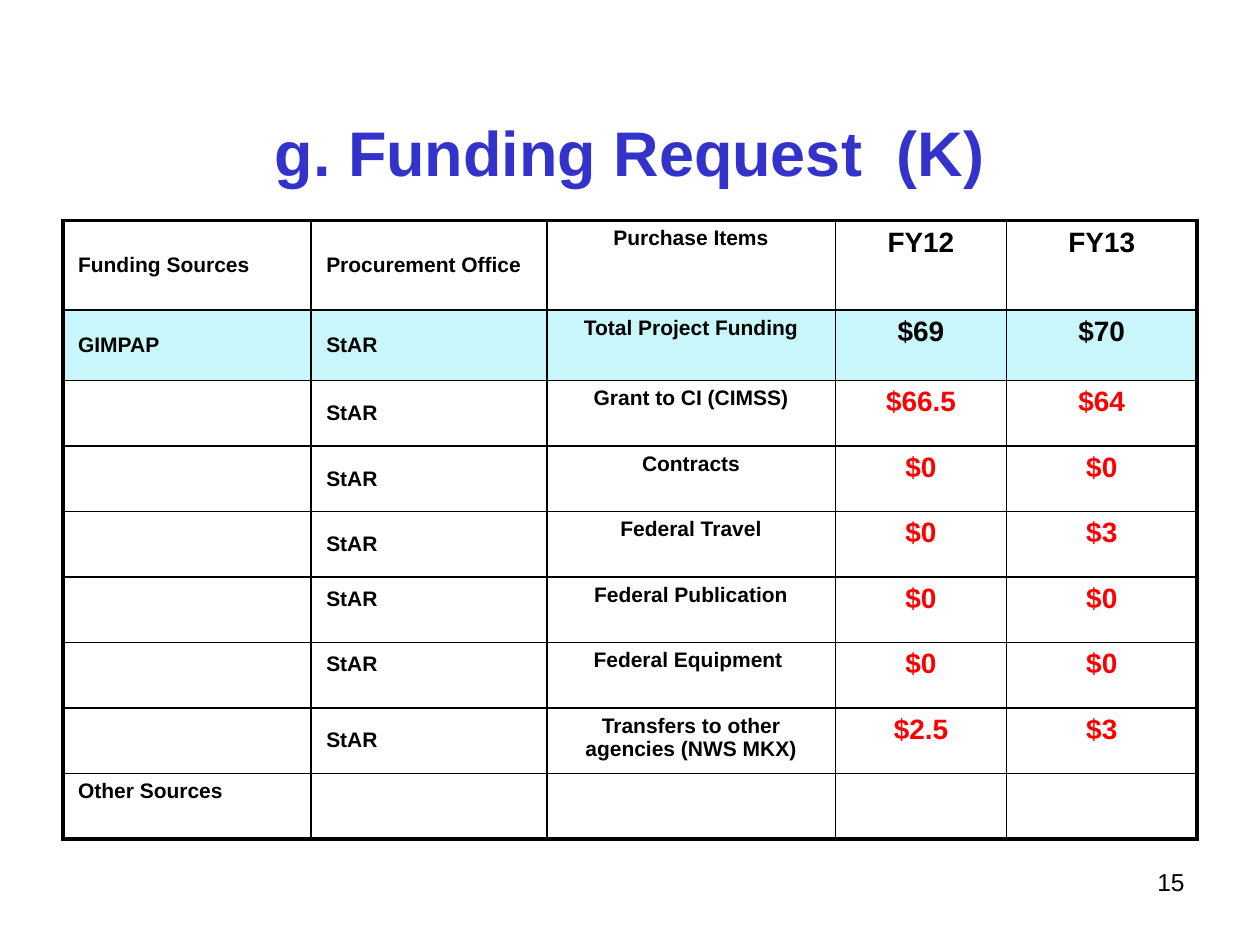
from lxml import etree
from pptx import Presentation
from pptx.dml.color import RGBColor
from pptx.enum.text import MSO_ANCHOR, PP_ALIGN
from pptx.oxml.ns import qn
from pptx.util import Inches, Pt

LEFT, CENTER, RIGHT = PP_ALIGN.LEFT, PP_ALIGN.CENTER, PP_ALIGN.RIGHT
TOP, MIDDLE, BOTTOM = MSO_ANCHOR.TOP, MSO_ANCHOR.MIDDLE, MSO_ANCHOR.BOTTOM
COLORS = {"title": "3333CC", "text": "000000", "amount": "FF0000",
          "total": "C9F6FB", "border": "000000"}


def write(tf, text, size, color, align, bold=True):
    p = tf.paragraphs[0]
    p.text = text
    p.alignment = align
    for r in p.runs:
        r.font.name = "Arial"
        r.font.size = Pt(size)
        r.font.bold = bold
        r.font.color.rgb = RGBColor.from_string(COLORS[color])


def set_borders(cell, widths):
    tcPr = cell._tc.get_or_add_tcPr()
    for i, (side, width) in enumerate(widths.items()):
        ln = etree.Element(qn("a:ln" + side), w=str(Pt(width)))
        fill = etree.SubElement(ln, qn("a:solidFill"))
        etree.SubElement(fill, qn("a:srgbClr"), val=COLORS["border"])
        tcPr.insert(i, ln)


prs = Presentation()
prs.slide_width, prs.slide_height = Inches(10), Inches(7.5)
s = prs.slides.add_slide(prs.slide_layouts[6])

# Title and page number
for text, box, size, color, align, anchor, bold in [
    ("g. Funding Request  (K)", (0.5, 0.3, 9, 1.25), 36, "title", CENTER, BOTTOM, True),
    ("15", (7.17, 6.83, 2.33, 0.52), 14, "text", RIGHT, TOP, False),
]:
    tf = s.shapes.add_textbox(*[Inches(v) for v in box]).text_frame
    tf.word_wrap = True
    tf.vertical_anchor = anchor
    write(tf, text, size, color, align, bold)

# Funding table
rows = [
    ("Funding Sources", "Procurement Office", "Purchase Items", "FY12", "FY13"),
    ("GIMPAP", "StAR", "Total Project Funding", "$69", "$70"),
    ("", "StAR", "Grant to CI (CIMSS)", "$66.5", "$64"),
    ("", "StAR", "Contracts", "$0", "$0"),
    ("", "StAR", "Federal Travel", "$0", "$3"),
    ("", "StAR", "Federal Publication", "$0", "$0"),
    ("", "StAR", "Federal Equipment ", "$0", "$0"),
    ("", "StAR", "Transfers to other agencies (NWS MKX)", "$2.5", "$3"),
    ("Other Sources", "", "", "", ""),
]
col_widths = [1.97, 1.87, 2.29, 1.36, 1.51]
row_heights = [0.71, 0.56] + [0.52] * 7
last_row, last_col = len(rows) - 1, len(col_widths) - 1
RAISED_ROWS = (5, 6)  # office name sits above the middle

table = s.shapes.add_table(len(rows), len(col_widths), Inches(0.5), Inches(1.75),
                           Inches(sum(col_widths)), Inches(sum(row_heights))).table
table.first_row = table.horz_banding = False
for col, width in zip(table.columns, col_widths):
    col.width = Inches(width)
for row, height in zip(table.rows, row_heights):
    row.height = Inches(height)

for i, values in enumerate(rows):
    for j, value in enumerate(values):
        cell = table.cell(i, j)
        cell.margin_left = cell.margin_right = Inches(0.12)
        cell.margin_top = cell.margin_bottom = Inches(0.05)
        cell.vertical_anchor = MIDDLE if j < 2 and i < last_row else TOP
        if j == 1 and i in RAISED_ROWS:
            cell.margin_bottom = Inches(0.22)
        if i == 1:
            cell.fill.solid()
            cell.fill.fore_color.rgb = RGBColor.from_string(COLORS["total"])
        else:
            cell.fill.background()
        write(cell.text_frame, value, 16 if j > 2 else 12,
              "amount" if j > 2 and i > 1 else "text", CENTER if j > 1 else LEFT)
        # Thick outer frame, thin inner grid
        outer = {"L": j == 0, "R": j == last_col, "T": i == 0, "B": i == last_row}
        set_borders(cell, {side: 2.25 if edge else 1 for side, edge in outer.items()})

prs.save("out.pptx")
